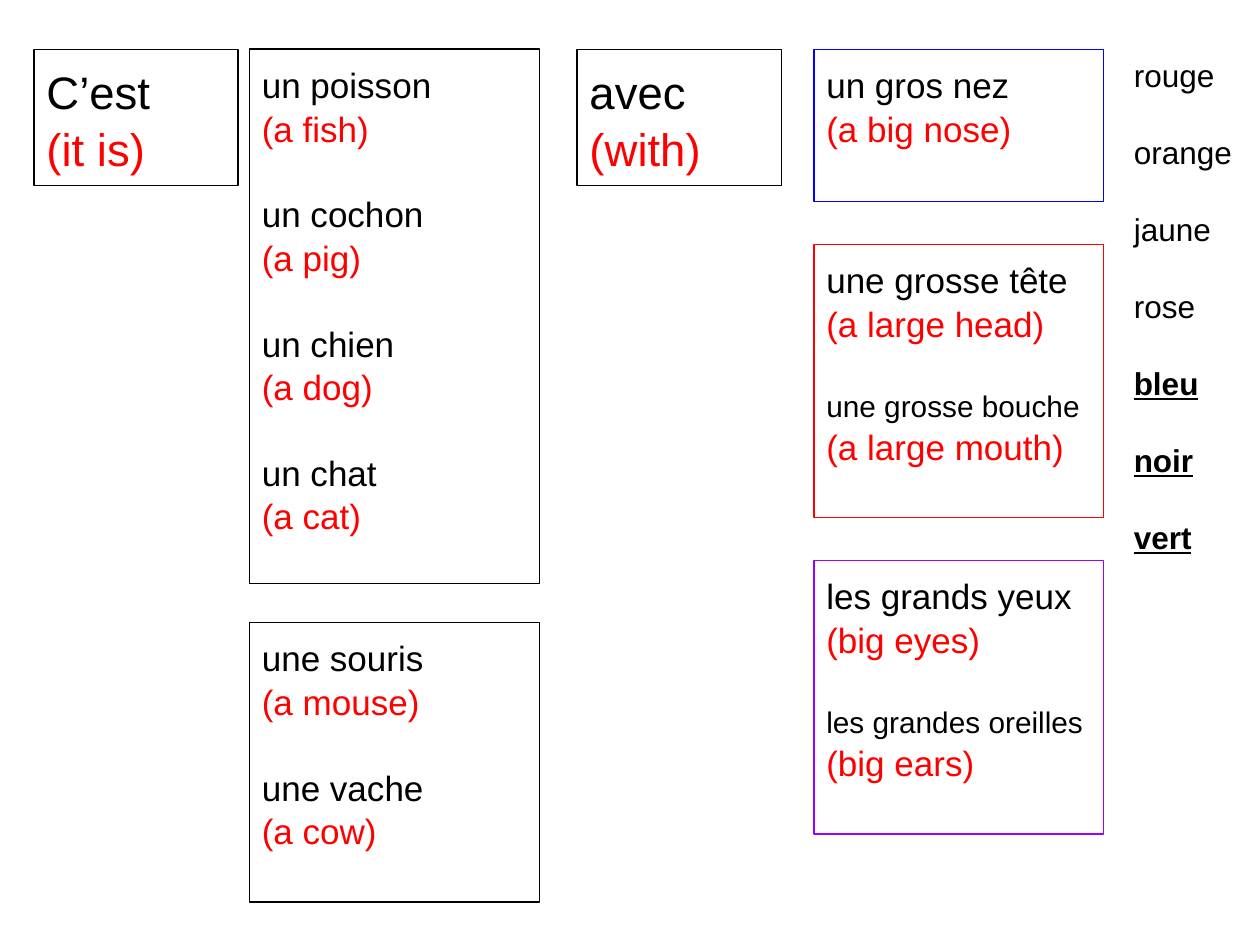
from pptx import Presentation
from pptx.dml.color import RGBColor
from pptx.enum.shapes import MSO_SHAPE as Shape
from pptx.enum.text import MSO_ANCHOR as Anchor, PP_ALIGN as Align
from pptx.util import Inches, Pt

COLORS = {"black": "000000", "red": "FF0000", "blue": "0000FF", "violet": "9900FF"}
FONT = "Arial"
LINE_SPACING = 1.04
INSET = 0.1
VERB_SIZE, WORD_SIZE, LONG_SIZE, COLOR_SIZE = 26, 20, 17, 18

# left, top, width, height, outline, (French, English, French size)
BOXES = [
    (0.27, 0.39, 1.62, 1.08, "black", VERB_SIZE, [("C’est", "(it is)")]),
    (1.98, 0.39, 2.3, 4.24, "black", WORD_SIZE, [
        ("un poisson", "(a fish)"), ("un cochon", "(a pig)"),
        ("un chien", "(a dog)"), ("un chat", "(a cat)")]),
    (1.98, 4.94, 2.3, 2.22, "black", WORD_SIZE, [
        ("une souris", "(a mouse)"), ("une vache", "(a cow)")]),
    (4.58, 0.39, 1.62, 1.08, "black", VERB_SIZE, [("avec", "(with)")]),
    (6.46, 0.39, 2.3, 1.21, "blue", WORD_SIZE, [("un gros nez", "(a big nose)")]),
    (6.46, 1.94, 2.3, 2.17, "red", WORD_SIZE, [
        ("une grosse tête", "(a large head)"),
        ("une grosse bouche", "(a large mouth)")]),
    (6.46, 4.45, 2.3, 2.17, "violet", WORD_SIZE, [
        ("les grands yeux", "(big eyes)"),
        ("les grandes oreilles", "(big ears)")]),
]
LONG_PHRASES = {"une grosse bouche", "les grandes oreilles"}
COLOR_WORDS = ["rouge", "orange", "jaune", "rose", "bleu", "noir", "vert"]
STRESSED_WORDS = {"bleu", "noir", "vert"}
COLOR_LIST_AREA = (8.9, 0.33, 1.01, 4.75)


def rgb(name):
    return RGBColor.from_string(COLORS[name])


def prepare_frame(shape):
    frame = shape.text_frame
    frame.word_wrap = True
    frame.vertical_anchor = Anchor.TOP
    frame.margin_left = frame.margin_right = Inches(INSET)
    frame.margin_top = frame.margin_bottom = Inches(INSET)
    return frame


def add_line(frame, index, text, size, color="black", gap=0, stressed=False):
    paragraph = frame.add_paragraph() if index else frame.paragraphs[0]
    paragraph.alignment = Align.LEFT
    paragraph.line_spacing = LINE_SPACING
    paragraph.space_before = Pt(gap)
    run = paragraph.add_run()
    run.text = text
    run.font.name = FONT
    run.font.size = Pt(size)
    run.font.color.rgb = rgb(color)
    if stressed:
        run.font.bold = run.font.underline = True


def add_phrase_box(slide, left, top, width, height, outline, size, phrases):
    box = slide.shapes.add_shape(
        Shape.RECTANGLE, Inches(left), Inches(top), Inches(width), Inches(height))
    box.shadow.inherit = False
    box.fill.background()
    box.line.color.rgb = rgb(outline)
    box.line.width = Pt(0.75)
    frame = prepare_frame(box)
    for index, (french, english) in enumerate(phrases):
        french_size = LONG_SIZE if french in LONG_PHRASES else size
        add_line(frame, 2 * index, french, french_size, gap=1.2 * size if index else 0)
        add_line(frame, 2 * index + 1, english, size, "red")


def add_color_list(slide):
    text_box = slide.shapes.add_textbox(*map(Inches, COLOR_LIST_AREA))
    frame = prepare_frame(text_box)
    for index, word in enumerate(COLOR_WORDS):
        add_line(frame, index, word, COLOR_SIZE, gap=1.2 * COLOR_SIZE if index else 0,
                 stressed=word in STRESSED_WORDS)


def main():
    """Build the French phrase-building slide."""
    presentation = Presentation()
    presentation.slide_width, presentation.slide_height = Inches(10), Inches(7.5)
    slide = presentation.slides.add_slide(presentation.slide_layouts[6])
    for box in BOXES:
        add_phrase_box(slide, *box)
    add_color_list(slide)
    presentation.save("out.pptx")


if __name__ == "__main__":
    main()
